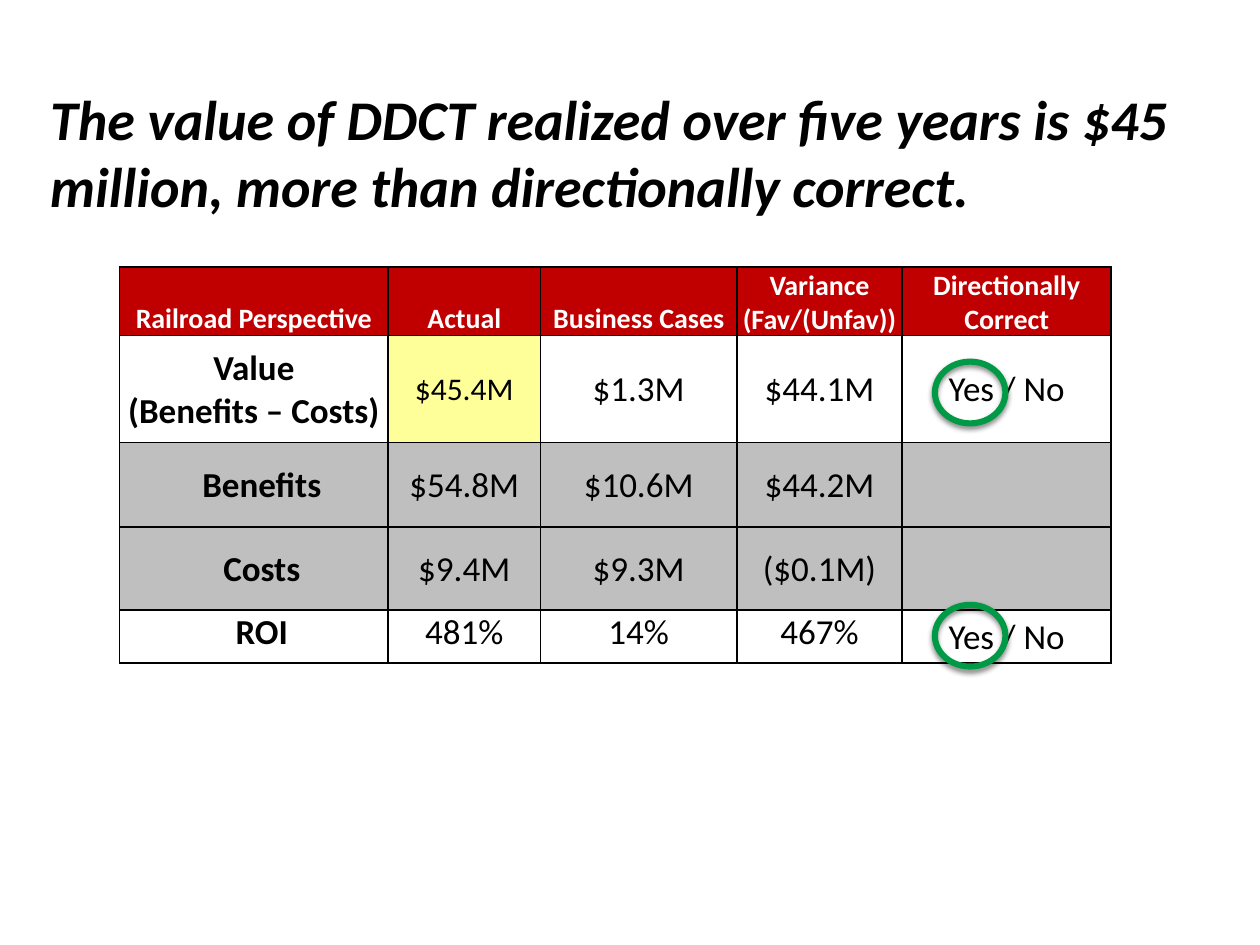
from dataclasses import dataclass
from lxml.etree import SubElement
from pptx import Presentation
from pptx.dml.color import RGBColor
from pptx.enum.shapes import MSO_SHAPE
from pptx.enum.text import MSO_ANCHOR, PP_ALIGN
from pptx.oxml import parse_xml
from pptx.oxml.ns import nsdecls, qn
from pptx.util import Inches, Pt


@dataclass(frozen=True)
class Theme:
    font: str = "Calibri"
    ink: str = "000000"
    paper: str = "FFFFFF"
    head: str = "C00000"
    band: str = "BFBFBF"
    mark: str = "FFFF99"
    ring: str = "009A46"
    title: int = 32
    body: int = 20
    note: int = 18
    label: int = 16


def unit(count):
    return Inches(count / 10)


class Board:
    def __init__(self, slide, theme):
        self.slide = slide
        self.theme = theme

    def style(self, frame, size, color, bold=False, slant=False):
        for para in frame.paragraphs:
            for run in para.runs:
                font = run.font
                font.name, font.size = self.theme.font, Pt(size)
                font.bold, font.italic = bold, slant
                font.color.rgb = RGBColor.from_string(color)

    def title(self, text, *box):
        frame = self.slide.shapes.add_textbox(*map(unit, box)).text_frame
        frame.word_wrap = True
        frame.text = text
        self.style(frame, self.theme.title, self.theme.ink, True, True)

    def border(self, cell):
        props = cell._tc.get_or_add_tcPr()
        for spot, side in enumerate(("lnL", "lnR", "lnT", "lnB")):
            line = parse_xml(
                f'<a:{side} {nsdecls("a")} w="{Pt(1)}"><a:solidFill>'
                f'<a:srgbClr val="{self.theme.ink}"/></a:solidFill></a:{side}>')
            props.insert(spot, line)

    def cell(self, cell, text, fill, size, color, bold, anchor, indent):
        cell.fill.solid()
        cell.fill.fore_color.rgb = RGBColor.from_string(fill)
        cell.margin_left = unit(0.1 + indent)
        cell.margin_right = cell.margin_top = unit(0.1)
        cell.margin_bottom = 0
        cell.vertical_anchor = anchor
        cell.text_frame.text = text
        for para in cell.text_frame.paragraphs:
            para.alignment = PP_ALIGN.CENTER
        self.style(cell.text_frame, size, color, bold)
        self.border(cell)

    def table(self, data, left, top, wide, high):
        theme = self.theme
        fills = (theme.head, theme.paper, theme.band, theme.band, theme.paper)
        grid = self.slide.shapes.add_table(
            len(high), len(wide), unit(left), unit(top),
            unit(sum(wide)), unit(sum(high))).table
        for col, width in zip(grid.columns, wide):
            col.width = unit(width)
        last = len(data) - 1
        for r, (row, texts) in enumerate(zip(grid.rows, data)):
            row.height = unit(high[r])
            for c, text in enumerate(texts):
                key = (r, c) == (1, 1)
                size = theme.label if r == 0 else theme.note if key else theme.body
                anchor = MSO_ANCHOR.MIDDLE
                if r == 0:
                    anchor = MSO_ANCHOR.BOTTOM
                elif r == last and c < len(wide) - 1:
                    anchor = MSO_ANCHOR.TOP
                self.cell(
                    grid.cell(r, c), text, theme.mark if key else fills[r], size,
                    theme.ink if r else theme.paper, r == 0 or c == 0, anchor,
                    1.26 if c == 0 and r > 1 else 0)

    def ring(self, *box):
        shape = self.slide.shapes.add_shape(MSO_SHAPE.OVAL, *map(unit, box))
        shape.fill.background()
        shape.line.color.rgb = RGBColor.from_string(self.theme.ring)
        shape.line.width = Pt(3.5)
        shape.shadow.inherit = False
        effects = shape._element.spPr.find(qn("a:effectLst"))
        shade = SubElement(
            effects, qn("a:outerShdw"), blurRad=str(Pt(3.1)), dist=str(Pt(1.8)),
            dir="5400000", rotWithShape="0")
        tint = SubElement(shade, qn("a:srgbClr"), val=self.theme.ink)
        SubElement(tint, qn("a:alpha"), val="48000")


def main():
    deck = Presentation()
    deck.slide_width, deck.slide_height = Inches(10), Inches(7.5)
    board = Board(deck.slides.add_slide(deck.slide_layouts[6]), Theme())
    board.title(
        "The value of DDCT realized over five years is $45 million, "
        "more than directionally correct.", 3, 6.2, 97, 11.8)
    data = (
        ("Railroad Perspective", "Actual", "Business Cases",
         "Variance (Fav/(Unfav))", "Directionally Correct"),
        ("Value\n(Benefits – Costs)", "$45.4M", "$1.3M", "$44.1M", "Yes / No"),
        ("Benefits", "$54.8M", "$10.6M", "$44.2M", ""),
        ("Costs", "$9.4M", "$9.3M", "($0.1M)", ""),
        ("ROI", "481%", "14%", "467%", "Yes / No"),
    )
    board.table(data, 9.5, 21.2, (21.3, 12.1, 15.6, 13.1, 16.6),
                (5.4, 8.5, 6.7, 6.6, 4.2))
    for top in (28.7, 48):
        board.ring(74.2, top, 5.6, 4.9)
    deck.save("out.pptx")


if __name__ == "__main__":
    main()
